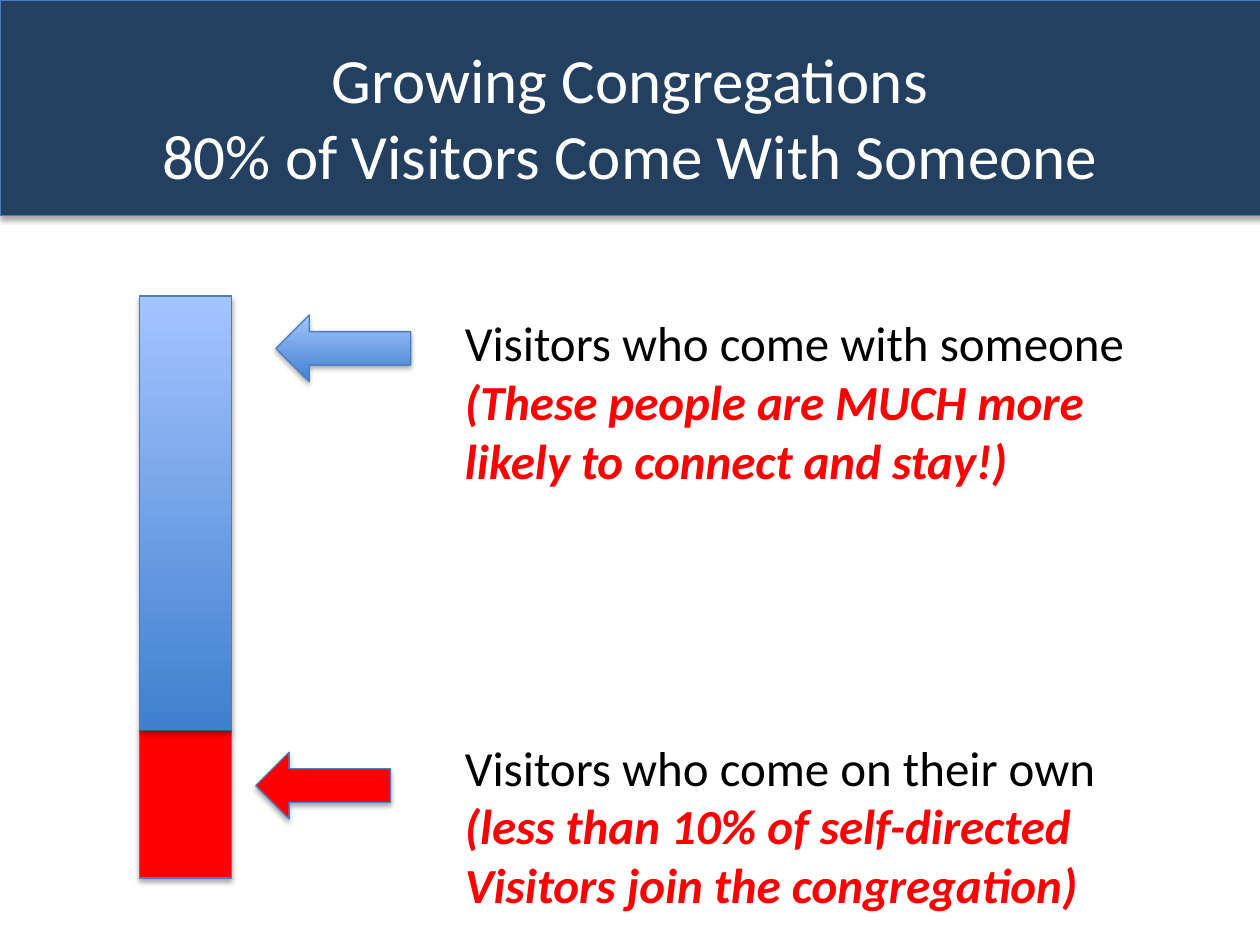
"""Build a slide showing how visitors arrive at growing congregations."""
from lxml import etree
from pptx import Presentation
from pptx.dml.color import RGBColor
from pptx.enum.shapes import MSO_SHAPE
from pptx.enum.text import MSO_ANCHOR, MSO_AUTO_SIZE, PP_ALIGN
from pptx.oxml import parse_xml
from pptx.oxml.ns import nsdecls, qn
from pptx.util import Inches, Pt

RECTANGLE = MSO_SHAPE.RECTANGLE
LEFT_ARROW = MSO_SHAPE.LEFT_ARROW
CENTER, LEFT = PP_ALIGN.CENTER, PP_ALIGN.LEFT
MIDDLE, TOP = MSO_ANCHOR.MIDDLE, MSO_ANCHOR.TOP
GROW, FIXED = MSO_AUTO_SIZE.SHAPE_TO_FIT_TEXT, MSO_AUTO_SIZE.NONE

NAVY, OUTLINE, RED = "234061", "4B7EBC", "FF0000"
BLUES = ("3F80CE", "A4C4FF")
SHADOW = (
    f'<a:outerShdw {nsdecls("a")} blurRad="40000" dist="23000" dir="5400000" rotWithShape="0">'
    '<a:srgbClr val="000000"><a:alpha val="35000"/></a:srgbClr></a:outerShdw>'
)


def color(hex_code):
    return RGBColor.from_string(hex_code)


def write(paragraph, text, size=28, ink="000000", strong=False, align=LEFT):
    paragraph.text = text
    paragraph.alignment = align
    for run in paragraph.runs:
        run.font.name = "Calibri"
        run.font.size = Pt(size)
        run.font.bold = run.font.italic = strong
        run.font.color.rgb = color(ink)


class VisitorSlide:
    def __init__(self, slide):
        self.slide = slide

    def block(self, preset, left, top, width, height, fill):
        shape = self.slide.shapes.add_shape(
            preset, Inches(left), Inches(top), Inches(width), Inches(height))
        if isinstance(fill, tuple):
            shape.fill.gradient()
            shape.fill.gradient_angle = 90
            for stop, shade in zip(shape.fill.gradient_stops, fill):
                stop.color.rgb = color(shade)
        else:
            shape.fill.solid()
            shape.fill.fore_color.rgb = color(fill)
        shape.line.color.rgb = color(OUTLINE)
        shape.line.width = Pt(0.75)
        shape.shadow.inherit = False
        effects = shape._element.spPr.find(qn("a:effectLst"))
        effects.append(parse_xml(etree.tostring(etree.fromstring(SHADOW))))

    def text(self, left, top, width, height, lines, wrap=False, anchor=TOP, fit=GROW):
        frame = self.slide.shapes.add_textbox(
            Inches(left), Inches(top), Inches(width), Inches(height)).text_frame
        frame.word_wrap = wrap
        frame.auto_size = fit
        frame.vertical_anchor = anchor
        for index, (line, style) in enumerate(lines):
            paragraph = frame.add_paragraph() if index else frame.paragraphs[0]
            write(paragraph, line, **style)

    def title(self, text):
        self.block(RECTANGLE, 0, 0, 10.05, 1.71, NAVY)
        style = dict(size=36, ink="FFFFFF", align=CENTER)
        self.text(0.5, 0.3, 9, 1.25, [(text, style)], wrap=True, anchor=MIDDLE, fit=FIXED)

    def bar_segment(self, top, height, fill):
        self.block(RECTANGLE, 1.11, top, 0.73, height, fill)

    def arrow(self, left, top, fill):
        self.block(LEFT_ARROW, left, top, 1.07, 0.53, fill)

    def explanation(self, top, width, group, *remarks):
        emphasis = dict(ink=RED, strong=True)
        lines = [(group, {})] + [(remark, emphasis) for remark in remarks]
        self.text(3.59, top, width, 1.51, lines)


def main():
    deck = Presentation()
    deck.slide_width, deck.slide_height = Inches(10), Inches(7.5)
    visitors = VisitorSlide(deck.slides.add_slide(deck.slide_layouts[6]))

    visitors.title("Growing Congregations\n80% of Visitors Come With Someone")
    visitors.bar_segment(5.8, 1.17, RED)
    visitors.bar_segment(2.35, 3.44, BLUES)
    visitors.explanation(5.8, 5.28, "Visitors who come on their own",
                         "(less than 10% of self-directed", "Visitors join the congregation)")
    visitors.explanation(2.43, 5.51, "Visitors who come with someone",
                         "(These people are MUCH more", "likely to connect and stay!)")
    visitors.arrow(2.19, 2.5, BLUES)
    visitors.arrow(2.03, 5.97, RED)
    deck.save("out.pptx")


if __name__ == "__main__":
    main()
